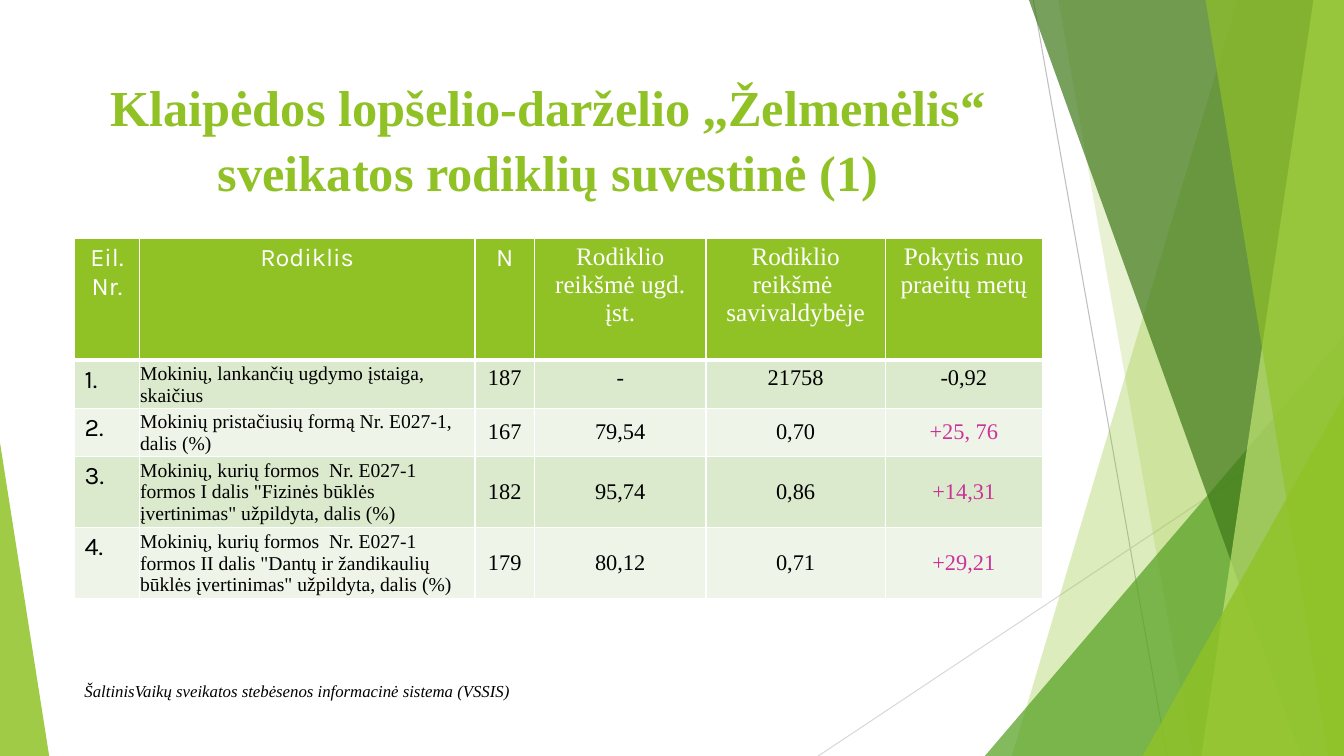
from lxml import etree
from pptx import Presentation
from pptx import util as u
from pptx.dml.color import RGBColor
from pptx.enum import shapes, text
from pptx.oxml.ns import qn

LIME = RGBColor(0x90, 0xC2, 0x26)
PALE_LIME = RGBColor(0xC0, 0xE4, 0x74)
GREEN = RGBColor(0x54, 0xA0, 0x21)
DARK_GREEN = RGBColor(0x3F, 0x78, 0x19)
BAND_DARK = RGBColor(0xDB, 0xE9, 0xCD)
BAND_LIGHT = RGBColor(0xEE, 0xF4, 0xE8)
PINK = RGBColor(0xCC, 0x33, 0x99)
LIGHT_GREY = RGBColor(0xD9, 0xD9, 0xD9)
GREY = RGBColor(0xBF, 0xBF, 0xBF)
WHITE = RGBColor(0xFF, 0xFF, 0xFF)
BLACK = RGBColor(0, 0, 0)
SERIF, SANS = "Times New Roman", "Karla"

W, H = 33.87, 19.05  # slide size in cm

COL_WIDTHS = [1.63, 8.46, 1.5, 4.32, 4.52, 3.96]
ROW_HEIGHTS = [3.08, 1.1, 1.1, 1.66, 1.64]
ROWS = [
    ["Eil. Nr.", "Rodiklis", "N", "Rodiklio reikšmė ugd. įst.",
     "Rodiklio reikšmė  savivaldybėje", "Pokytis nuo praeitų metų"],
    ["1.", "Mokinių, lankančių ugdymo įstaiga, skaičius",
     "187", "-", "21758", "-0,92"],
    ["2.", "Mokinių pristačiusių formą Nr. E027-1, dalis (%)",
     "167", "79,54", "0,70", "+25, 76"],
    ["3.", "Mokinių, kurių formos  Nr. E027-1 formos I dalis "
     "\"Fizinės būklės įvertinimas\" užpildyta, dalis (%)",
     "182", "95,74", "0,86", "+14,31"],
    ["4.", "Mokinių, kurių formos  Nr. E027-1 formos II dalis "
     "\"Dantų ir žandikaulių būklės įvertinimas\" užpildyta, dalis (%)",
     "179", "80,12", "0,71", "+29,21"],
]


def set_font(p, size, color, name=SERIF, bold=False, italic=False):
    f = p.font
    f.size, f.name, f.bold, f.italic = u.Pt(size), name, bold, italic
    f.color.rgb = color


def paint(sp, color, opacity):
    sp.shadow.inherit = False
    sp.fill.solid()
    sp.fill.fore_color.rgb = color
    sp.line.fill.background()
    clr = sp.fill._xPr.find(qn("a:solidFill"))[0]
    etree.SubElement(clr, qn("a:alpha"), val=str(opacity * 1000))


def add_line(s, x1, y1, x2, y2, color):
    ln = s.shapes.add_connector(shapes.MSO_CONNECTOR.STRAIGHT,
                                u.Cm(x1), u.Cm(y1), u.Cm(x2), u.Cm(y2))
    ln.line.color.rgb = color
    ln.line.width = u.Pt(0.75)
    etree.SubElement(ln._element.spPr, qn("a:effectLst"))


def add_facet(s, top_x, bottom_x, color, opacity):
    """Full-height panel from a slanted left edge to the slide's right edge."""
    fb = s.shapes.build_freeform(u.Cm(top_x), 0)
    fb.add_line_segments([(u.Cm(x), u.Cm(y)) for x, y in
                          [(W, 0), (W, H), (bottom_x, H)]])
    paint(fb.convert_to_shape(), color, opacity)


def add_corner(s, left, top, width, apex, color, opacity):
    """Triangle standing on the slide's bottom edge."""
    sp = s.shapes.add_shape(shapes.MSO_SHAPE.ISOSCELES_TRIANGLE, u.Cm(left),
                            u.Cm(top), u.Cm(width), u.Cm(H - top))
    sp.adjustments[0] = apex
    paint(sp, color, opacity)


def add_text(s, left, top, width, height, words, align, size, color, **style):
    tf = s.shapes.add_textbox(u.Cm(left), u.Cm(top), u.Cm(width),
                              u.Cm(height)).text_frame
    tf.word_wrap = True
    p = tf.paragraphs[0]
    p.text, p.alignment = words, align
    set_font(p, size, color, **style)
    return p


def set_borders(cell, bottom):
    tcPr = cell._tc.get_or_add_tcPr()
    widths = {"a:lnL": 1, "a:lnR": 1, "a:lnT": 1, "a:lnB": bottom}
    for i, (tag, width) in enumerate(widths.items()):
        ln = etree.Element(qn(tag), w=str(u.Pt(width)))
        fill = etree.SubElement(ln, qn("a:solidFill"))
        etree.SubElement(fill, qn("a:srgbClr"), val=str(WHITE))
        tcPr.insert(i, ln)


def fill_cell(cell, words, row, col):
    header = row == 0
    cell.fill.solid()
    cell.fill.fore_color.rgb = (LIME if header else
                                BAND_DARK if row % 2 else BAND_LIGHT)
    set_borders(cell, 3 if header else 1)
    p = cell.text_frame.paragraphs[0]
    p.text = words
    if header or col > 1:
        p.alignment = text.PP_ALIGN.CENTER
    if header:
        set_font(p, 18, WHITE, SANS if col < 3 else SERIF)
    elif col == 0:
        set_font(p, 18, BLACK, SANS)
    elif col == 1:
        set_font(p, 14, BLACK)
    else:
        set_font(p, 16, PINK if words.startswith("+") else BLACK)
    # Indicator names and the lower figures sit mid-cell with thin margins
    if not header and (col == 1 or (col > 1 and row > 1)):
        cell.vertical_anchor = text.MSO_ANCHOR.MIDDLE
        inset = u.Cm(0.02 if col == 1 else 0.08)
        cell.margin_left = cell.margin_right = cell.margin_top = inset
        cell.margin_bottom = 0 if col == 1 else inset


def add_indicators(s, left, top):
    tbl = s.shapes.add_table(len(ROWS), len(COL_WIDTHS), u.Cm(left), u.Cm(top),
                             u.Cm(sum(COL_WIDTHS)),
                             u.Cm(sum(ROW_HEIGHTS))).table
    for column, width in zip(tbl.columns, COL_WIDTHS):
        column.width = u.Cm(width)
    for i, (height, row) in enumerate(zip(ROW_HEIGHTS, ROWS)):
        tbl.rows[i].height = u.Cm(height)
        for j, words in enumerate(row):
            fill_cell(tbl.cell(i, j), words, i, j)


def main():
    prs = Presentation()
    prs.slide_width, prs.slide_height = u.Cm(W), u.Cm(H)
    s = prs.slides.add_slide(prs.slide_layouts[6])

    # Faceted decoration
    add_line(s, 26.04, 0, 29.41, H, GREY)
    add_line(s, W, 10.24, 20.62, H, LIGHT_GREY)
    add_facet(s, 31.19, 25.5, LIME, 30)
    add_facet(s, 26.67, 30.05, LIME, 20)
    add_corner(s, 24.82, 8.46, W - 24.82, 1, GREEN, 72)
    add_facet(s, 25.93, 32.79, DARK_GREEN, 70)
    add_facet(s, 33.1, 30.28, PALE_LIME, 70)
    add_facet(s, 30.38, 33.48, LIME, 65)
    add_corner(s, 28.8, 9.98, W - 28.8, 1, LIME, 80)
    add_corner(s, 0, 11.15, 1.24, 0, LIME, 85)

    # Title
    p = add_text(s, 1.88, 1.7, 23.88, 3.66,
                 "Klaipėdos lopšelio-darželio ,,Želmenėlis“ "
                 "sveikatos rodiklių suvestinė (1)",
                 text.PP_ALIGN.CENTER, 36, LIME, bold=True)
    p.line_spacing = 1.07

    # Indicator table
    add_indicators(s, 1.88, 6)

    # Data source
    add_text(s, 1.88, 17.04, 16.94, 0.76,
             "ŠaltinisVaikų sveikatos stebėsenos informacinė sistema (VSSIS)",
             text.PP_ALIGN.LEFT, 12, BLACK, italic=True)

    prs.save("out.pptx")


if __name__ == "__main__":
    main()
